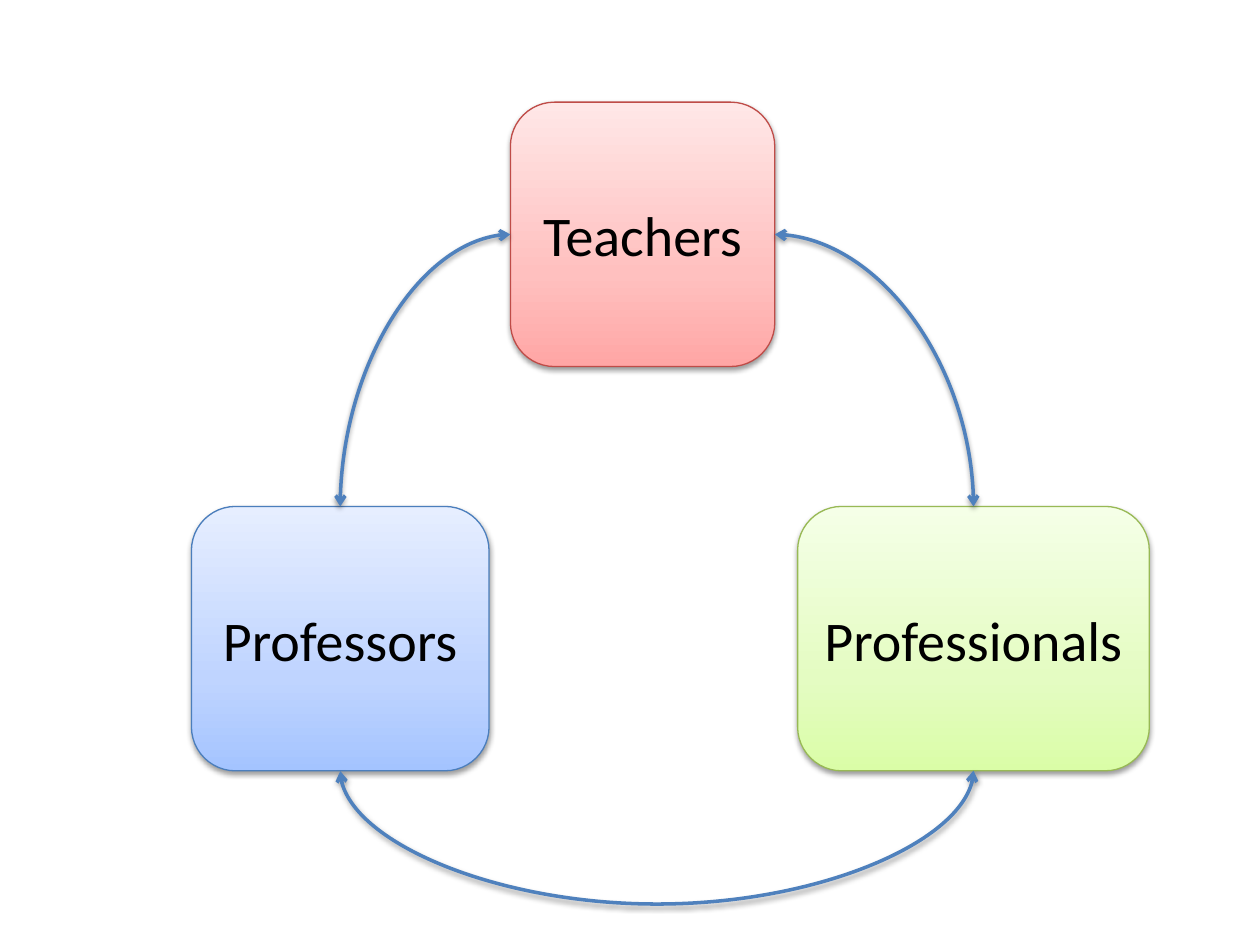
from pptx import Presentation
from pptx.dml.color import RGBColor
from pptx.enum.shapes import MSO_CONNECTOR as Connector, MSO_SHAPE as Shape
from pptx.enum.text import MSO_ANCHOR as Anchor, PP_ALIGN as Align
from pptx.oxml import parse_xml
from pptx.oxml.ns import nsdecls, qn
from pptx.util import Cm, Pt

COLORS = {
    "text": "000000",
    "arrow": "4F81BD",
    "shadow": "000000",
    "blue": ("A4C4FF", "BFD4FF", "E6EEFF"),
    "blue_line": "4B7EBC",
    "green": ("DAFDA7", "E4FCC2", "F5FFE7"),
    "green_line": "98B955",
    "red": ("FFA6A5", "FFC0BF", "FFE7E7"),
    "red_line": "BF4C48",
}
STOPS = (0, 35, 100)
TOP, LEFT, BOTTOM, RIGHT = range(4)


def rgb(name):
    return RGBColor.from_string(COLORS[name])


def add_shadow(shape):
    shape._element.spPr.append(parse_xml(
        f'<a:effectLst {nsdecls("a")}>'
        f'<a:outerShdw blurRad="{Pt(3.1)}" dist="{Pt(1.6)}" dir="5400000" rotWithShape="0">'
        f'<a:srgbClr val="{COLORS["shadow"]}"><a:alpha val="38000"/></a:srgbClr>'
        '</a:outerShdw></a:effectLst>'))


def set_gradient(shape, name):
    shape.fill.gradient()
    shape.fill.gradient_angle = 90
    stops = shape._element.spPr.find(qn("a:gradFill")).find(qn("a:gsLst"))
    stops.clear()
    for position, color in zip(STOPS, COLORS[name]):
        stops.append(parse_xml(
            f'<a:gs {nsdecls("a")} pos="{position * 1000}"><a:srgbClr val="{color}"/></a:gs>'))


def write_text(shape, text, size=32, font="Calibri", color="text", align=Align.CENTER):
    frame = shape.text_frame
    frame.word_wrap = False
    frame.vertical_anchor = Anchor.MIDDLE
    paragraph = frame.paragraphs[0]
    paragraph.alignment = align
    run = paragraph.add_run()
    run.text = text
    run.font.size = Pt(size)
    run.font.name = font
    run.font.color.rgb = rgb(color)


def add_group_box(slide, text, color, left, top, width, height):
    shape = slide.shapes.add_shape(Shape.ROUNDED_RECTANGLE, left, top, width, height)
    set_gradient(shape, color)
    shape.line.color.rgb = rgb(f"{color}_line")
    shape.line.width = Pt(0.75)
    add_shadow(shape)
    write_text(shape, text)
    return shape


def style_arrow(connector):
    connector.line.color.rgb = rgb("arrow")
    connector.line.width = Pt(2)
    line = connector.line._get_or_add_ln()
    for end in ("headEnd", "tailEnd"):
        line.append(parse_xml(f'<a:{end} {nsdecls("a")} type="arrow"/>'))
    add_shadow(connector)


def add_side_arrow(slide, upper, side, lower):
    connector = slide.shapes.add_connector(Connector.CURVE, 0, 0, 0, 0)
    connector.begin_connect(upper, side)
    connector.end_connect(lower, TOP)
    connector._element.spPr.find(qn("a:prstGeom")).set("prst", "curvedConnector2")
    style_arrow(connector)


def add_bottom_arrow(slide, right_box, left_box, depth):
    connector = slide.shapes.add_connector(Connector.CURVE, 0, 0, 0, 0)
    connector.begin_connect(right_box, BOTTOM)
    connector.end_connect(left_box, BOTTOM)
    start, end = connector.begin_x, connector.end_x
    thickness, span = Cm(0.01), start - end
    transform = connector._element.spPr.find(qn("a:xfrm"))
    transform.attrib.clear()
    transform.set("rot", "5400000")
    connector.left = (start + end - thickness) // 2
    connector.top = right_box.top + right_box.height - span // 2
    connector.width, connector.height = thickness, span
    guides = connector._element.spPr.find(qn("a:prstGeom")).find(qn("a:avLst"))
    guides.append(parse_xml(
        f'<a:gd {nsdecls("a")} name="adj1" fmla="val {depth * 100000 // thickness}"/>'))
    style_arrow(connector)


def add_cycle(slide, left, top, side):
    row = top + Cm(8.15)
    professors = add_group_box(slide, "Professors", "blue", left, row, Cm(6), side)
    professionals = add_group_box(
        slide, "Professionals", "green", left + Cm(12.22), row, Cm(7.09), side)
    teachers = add_group_box(slide, "Teachers", "red", left + Cm(6.43), top, side, side)
    add_side_arrow(slide, teachers, RIGHT, professionals)
    add_bottom_arrow(slide, professionals, professors, Cm(2.69))
    add_side_arrow(slide, teachers, LEFT, professors)


def main():
    presentation = Presentation()
    presentation.slide_width, presentation.slide_height = Cm(25.4), Cm(19.05)
    slide = presentation.slides.add_slide(presentation.slide_layouts[6])
    add_cycle(slide, left=Cm(3.86), top=Cm(2.06), side=Cm(5.33))
    presentation.save("out.pptx")


if __name__ == "__main__":
    main()
